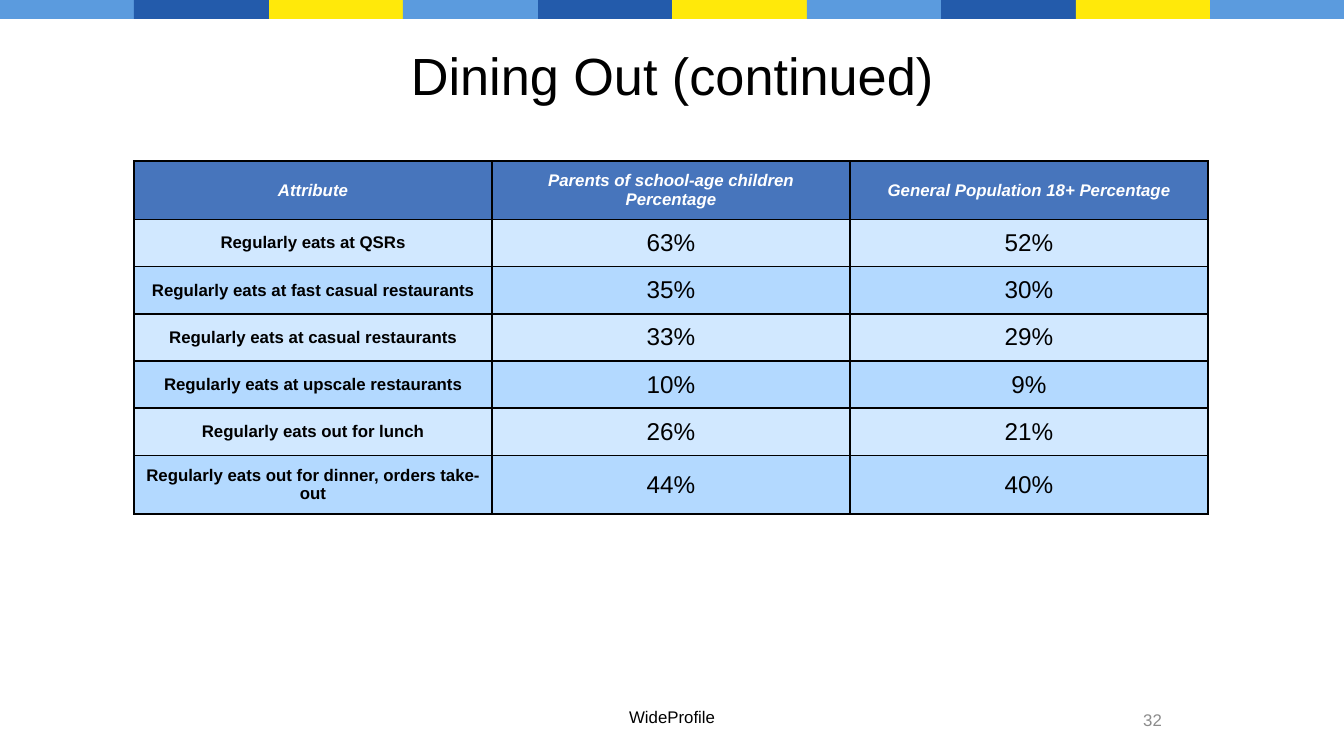
import pptx
import pptx.util
import pptx.dml.color
import pptx.enum.shapes
import pptx.enum.text
import pptx.oxml
import pptx.oxml.ns

FONT = "Arial"
STRIPES = ["5B9BDE", "235BAB", "FFE90A"]
BANDS = ["D1E8FF", "B3D9FF"]
HEADER = ["Attribute", "Parents of school-age children Percentage",
          "General Population 18+ Percentage"]
ROWS = [
    ("Regularly eats at QSRs", "63%", "52%"),
    ("Regularly eats at fast casual restaurants", "35%", "30%"),
    ("Regularly eats at casual restaurants", "33%", "29%"),
    ("Regularly eats at upscale restaurants", "10%", "9%"),
    ("Regularly eats out for lunch", "26%", "21%"),
    ("Regularly eats out for dinner, orders take-out", "44%", "40%"),
]
ROW_HEIGHTS = [56] + [46] * 5 + [56]
ALIGN = pptx.enum.text.PP_ALIGN
ANCHOR = pptx.enum.text.MSO_ANCHOR


def px(n):
    return pptx.util.Emu(round(n * 914400 / 134.4))


def rgb(value):
    return pptx.dml.color.RGBColor.from_string(value)


def place(sp, left, top, width, height):
    sp.left, sp.top, sp.width, sp.height = map(px, (left, top, width, height))


def write(tf, text, size, color, align=ALIGN.CENTER, bold=False, italic=False):
    tf.word_wrap = True
    p = tf.paragraphs[0]
    p.alignment = align
    r = p.add_run()
    r.text = text
    font = r.font
    font.name = FONT
    font.size = pptx.util.Pt(size)
    font.bold = bold
    font.italic = italic
    font.color.rgb = rgb(color)
    return p


def add_stripes(s):
    for i in range(10):
        sp = s.shapes.add_shape(pptx.enum.shapes.MSO_SHAPE.RECTANGLE,
                                px(i * 1345 // 10), 0, px(135), px(19))
        sp.shadow.inherit = False
        sp.fill.solid()
        sp.fill.fore_color.rgb = rgb(STRIPES[i % len(STRIPES)])
        sp.line.fill.background()


def add_title(s, text):
    sp = s.shapes.title
    place(sp, 67, 31, 1210, 88)
    sp.text_frame.vertical_anchor = ANCHOR.MIDDLE
    write(sp.text_frame, text, 28, "000000")


def add_footer(s, text):
    sp = s.placeholders[1]
    place(sp, 568, 700, 208, 34)
    tf = sp.text_frame
    tf.auto_size = pptx.enum.text.MSO_AUTO_SIZE.SHAPE_TO_FIT_TEXT
    p = write(tf, text, 9, "000000")
    p.space_before = pptx.util.Pt(0)
    pPr = p._p.get_or_add_pPr()
    pPr.set("marL", "0")
    pPr.set("indent", "0")
    pPr.append(pptx.oxml.parse_xml(
        f"<a:buNone {pptx.oxml.ns.nsdecls('a')}/>"))


def add_page_number(s, text):
    sp = s.shapes.add_textbox(px(1003), px(700), px(172), px(40))
    sp.text_frame.vertical_anchor = ANCHOR.MIDDLE
    write(sp.text_frame, text, 9, "8C8C8C", ALIGN.RIGHT)


def set_borders(cell, color, width):
    tcPr = cell._tc.get_or_add_tcPr()
    for i, side in enumerate(("lnL", "lnR", "lnT", "lnB")):
        tcPr.insert(i, pptx.oxml.parse_xml(
            f"<a:{side} {pptx.oxml.ns.nsdecls('a')} w='{pptx.util.Pt(width)}'>"
            f"<a:solidFill><a:srgbClr val='{color}'/></a:solidFill></a:{side}>"))


def fill_cell(cell, text, fill, size, color, bold, italic):
    cell.margin_left = cell.margin_right = px(9)
    cell.margin_top = cell.margin_bottom = px(9)
    cell.vertical_anchor = ANCHOR.MIDDLE
    cell.fill.solid()
    cell.fill.fore_color.rgb = rgb(fill)
    set_borders(cell, "000000", 1)
    write(cell.text_frame, text, size, color, bold=bold, italic=italic)


def add_dining_table(s):
    table = s.shapes.add_table(len(ROW_HEIGHTS), len(HEADER), px(134), px(161),
                               px(3 * 358), px(sum(ROW_HEIGHTS))).table
    for column in table.columns:
        column.width = px(358)
    for row, height in zip(table.rows, ROW_HEIGHTS):
        row.height = px(height)
    for c, text in enumerate(HEADER):
        fill_cell(table.cell(0, c), text, "4775BC", 9, "FFFFFF", True, True)
    for r, values in enumerate(ROWS):
        for c, text in enumerate(values):
            label = c == 0
            fill_cell(table.cell(r + 1, c), text, BANDS[r % 2],
                      9 if label else 13, "000000", label, False)


def main():
    prs = pptx.Presentation()
    prs.slide_width, prs.slide_height = px(1344), px(756)
    s = prs.slides.add_slide(prs.slide_layouts[1])
    add_stripes(s)
    add_title(s, "Dining Out (continued)")
    add_dining_table(s)
    add_footer(s, "WideProfile")
    add_page_number(s, "32")
    prs.save("out.pptx")


if __name__ == "__main__":
    main()
